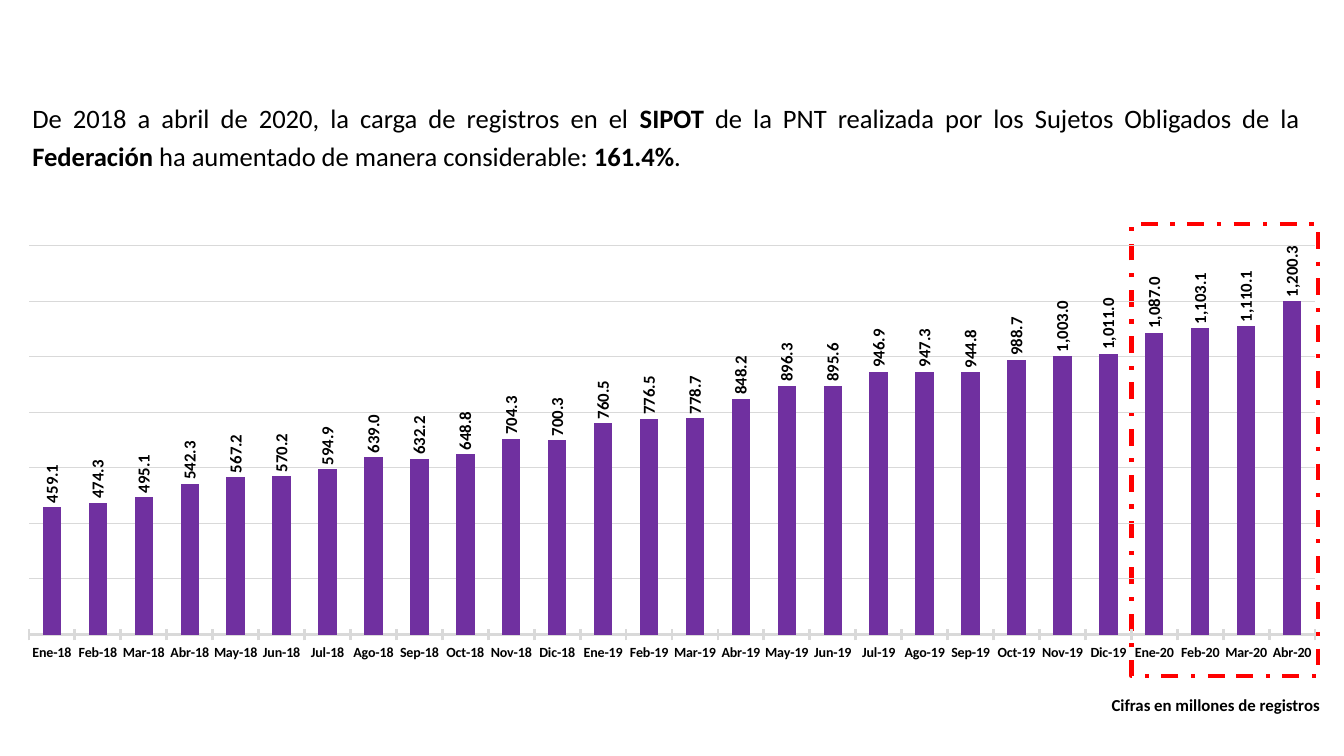
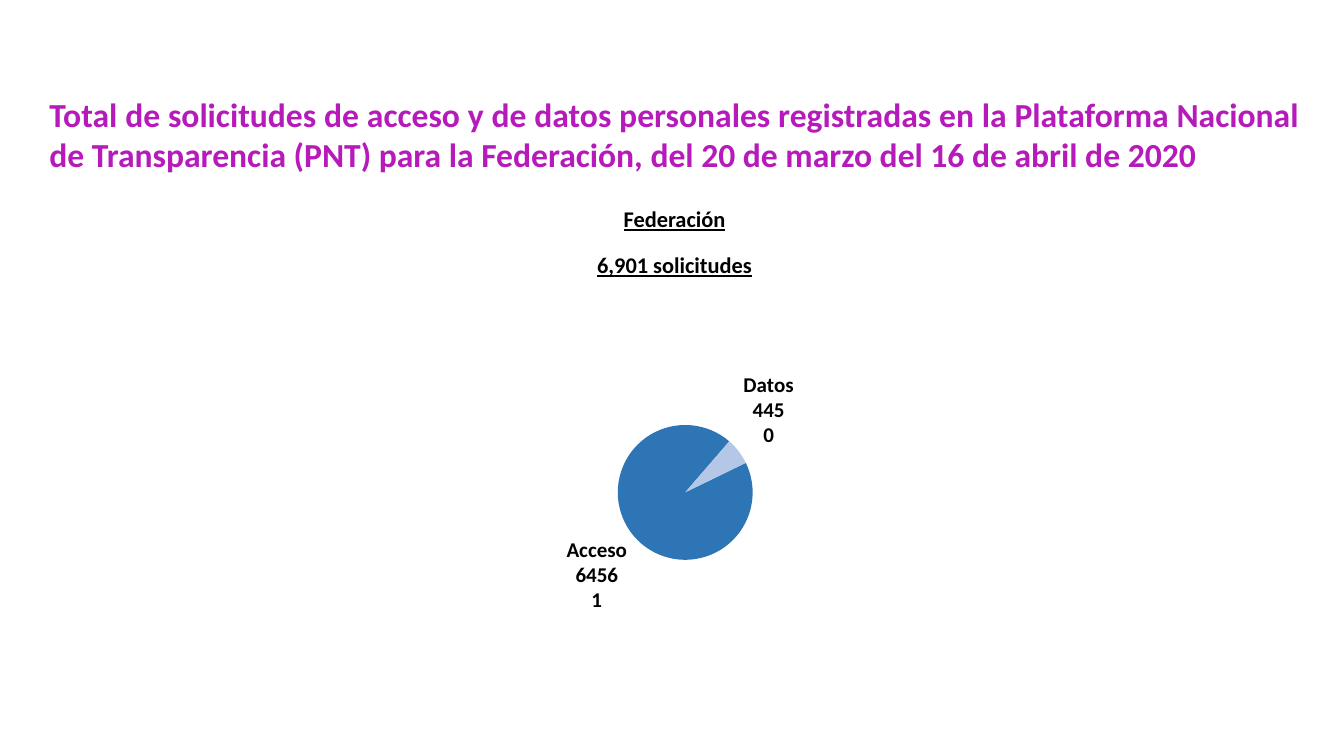
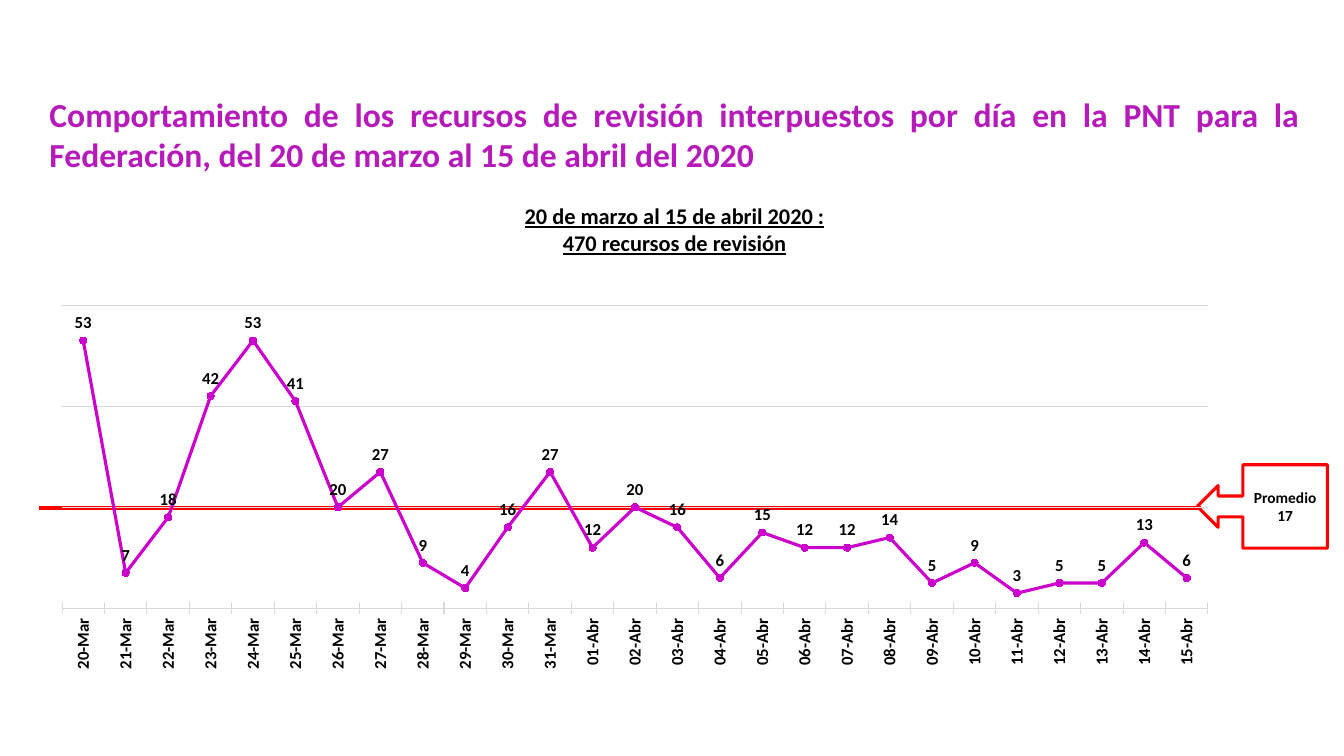
from dataclasses import dataclass

from lxml.etree import SubElement
from pptx import Presentation
from pptx.chart.data import CategoryChartData
from pptx.dml.color import RGBColor
from pptx.enum.chart import XL_CHART_TYPE, XL_LABEL_POSITION, XL_MARKER_STYLE, XL_TICK_MARK
from pptx.enum.dml import MSO_LINE
from pptx.enum.shapes import MSO_CONNECTOR, MSO_SHAPE
from pptx.enum.text import MSO_ANCHOR, PP_ALIGN
from pptx.oxml import parse_xml
from pptx.oxml.ns import nsdecls, qn
from pptx.util import Inches, Pt

FONT = "Calibri"
BLACK = RGBColor(0x00, 0x00, 0x00)
RED = RGBColor(0xFF, 0x00, 0x00)
MAGENTA = RGBColor(0xB6, 0x1A, 0xBA)
PINK = RGBColor(0xCC, 0x00, 0xCC)
PURPLE = RGBColor(0x70, 0x30, 0xA0)
BLUE = RGBColor(0x2E, 0x75, 0xB6)
PALE_BLUE = RGBColor(0xB4, 0xC7, 0xE7)
GRID_GRAY = RGBColor(0xD9, 0xD9, 0xD9)
TITLE_ONLY = 5

MONTHS = "Ene Feb Mar Abr May Jun Jul Ago Sep Oct Nov Dic".split()
LOAD_MONTHS = [f"{month}-{year}" for year in (18, 19, 20) for month in MONTHS][:28]
LOADS = [459.1, 474.3, 495.1, 542.3, 567.2, 570.2, 594.9, 639, 632.2, 648.8,
         704.3, 700.3, 760.5, 776.5, 778.7, 848.2, 896.3, 895.6, 946.9, 947.3,
         944.8, 988.7, 1003, 1011, 1087, 1103.1, 1110.1, 1200.3]
APPEAL_DAYS = ([f"{day}-Mar" for day in range(20, 32)]
               + [f"{day:02}-Abr" for day in range(1, 16)])
APPEALS = [53, 7, 18, 42, 53, 41, 20, 27, 9, 4, 16, 27, 12, 20, 16, 6, 15,
           12, 12, 14, 5, 9, 3, 5, 5, 13, 6]


@dataclass
class Box:
    left: int
    top: int
    width: int
    height: int

    def share(self, left, top, width, height):
        """Return an inner box given as percentages of this one."""
        return Box(int(self.left + self.width * left / 100),
                   int(self.top + self.height * top / 100),
                   int(self.width * width / 100), int(self.height * height / 100))

    def place(self):
        return self.left, self.top, self.width, self.height


PAGE = Box(0, 0, Inches(13.33), Inches(7.5))
TITLE_BOX = PAGE.share(2.93, 11.73, 94.52, 12.13)


# Text
def set_font(font, size, color=BLACK, bold=True, underline=None):
    font.name, font.size, font.bold, font.underline = FONT, Pt(size), bold, underline
    font.color.rgb = color


def write_text(frame, *lines, size, color=BLACK, bold=True, underline=None,
               align=PP_ALIGN.CENTER, anchor=MSO_ANCHOR.TOP, line_spacing=None, gap=0):
    """Write one paragraph a line; asterisks switch bold on and off."""
    frame.word_wrap = True
    frame.vertical_anchor = anchor
    for index, line in enumerate(lines):
        paragraph = frame.add_paragraph() if index else frame.paragraphs[0]
        paragraph.alignment = align
        paragraph.line_spacing = line_spacing
        paragraph.space_before = Pt(gap if index else 0)
        for number, piece in enumerate(line.split("*")):
            if piece:
                run = paragraph.add_run()
                run.text = piece
                set_font(run.font, size, color, bold != bool(number % 2), underline)


def add_label(slide, box, *lines, **text_format):
    write_text(slide.shapes.add_textbox(*box.place()).text_frame, *lines, **text_format)


def add_titled_slide(presentation, text, box=TITLE_BOX, size=24, color=MAGENTA, **text_format):
    slide = presentation.slides.add_slide(presentation.slide_layouts[TITLE_ONLY])
    title = slide.shapes.title
    title.left, title.top, title.width, title.height = box.place()
    write_text(title.text_frame, text, size=size, color=color,
               align=PP_ALIGN.JUSTIFY, **text_format)
    return slide


# Outlines
def style_outline(shape, width):
    shape.shadow.inherit = False
    shape.fill.background()
    shape.line.color.rgb = RED
    shape.line.width = Pt(width)


# Charts
def add_chart(slide, box, kind, categories, values, size, label_position, label_format):
    data = CategoryChartData()
    data.categories = categories
    data.add_series("Series 1", values)
    chart = slide.shapes.add_chart(kind, *box.place(), data).chart
    chart.has_legend = chart.has_title = False
    set_font(chart.font, size)
    labels = chart.plots[0].series[0].data_labels
    labels.show_value = True
    labels.position = label_position
    labels.number_format = label_format
    labels.number_format_is_linked = False
    set_font(labels.font, size)
    return chart


def style_axes(chart, maximum, step, size, axis_width):
    chart.plots[0].vary_by_categories = False
    values, categories = chart.value_axis, chart.category_axis
    values.visible = False
    values.minimum_scale, values.maximum_scale, values.major_unit = 0, maximum, step
    values.has_major_gridlines = True
    for line, width in ((values.major_gridlines.format.line, 0.75),
                        (categories.format.line, axis_width)):
        line.color.rgb = GRID_GRAY
        line.width = Pt(width)
    categories.major_tick_mark = XL_TICK_MARK.CROSS
    set_font(categories.tick_labels.font, size)


def rotate_text(chart, owner, degrees):
    for body in chart.element.xpath(f".//{owner}/c:txPr/a:bodyPr"):
        body.set("rot", str(degrees * 60000))
        body.set("vert", "horz")


def set_plot_box(chart, left, top, width, height):
    """Fix the inner plot area, in percentages of the chart."""
    area = chart.element.xpath("c:chart/c:plotArea")[0]
    for layout in area.findall(qn("c:layout")):
        area.remove(layout)
    layout = parse_xml(f"<c:layout {nsdecls('c')}><c:manualLayout/></c:layout>")
    settings = {"layoutTarget": "inner", "xMode": "edge", "yMode": "edge",
                "x": left / 100, "y": top / 100, "w": width / 100, "h": height / 100}
    for name, value in settings.items():
        SubElement(layout[0], qn(f"c:{name}")).set("val", str(value))
    area.insert(0, layout)


def add_load_chart(slide, box):
    plot_left, plot_width, marked_months = 0.9, 98.2, 4
    # Frame around the latest months
    marked_width = plot_width * marked_months / len(LOADS)
    frame_box = box.share(plot_left + plot_width - marked_width, 0, marked_width + 0.2, 98.25)
    frame = slide.shapes.add_shape(MSO_SHAPE.RECTANGLE, *frame_box.place())
    style_outline(frame, 3)
    frame.line.dash_style = MSO_LINE.DASH_DOT
    # Columns
    chart = add_chart(slide, box, XL_CHART_TYPE.COLUMN_CLUSTERED, LOAD_MONTHS, LOADS,
                      12, XL_LABEL_POSITION.OUTSIDE_END, "#,##0.0")
    style_axes(chart, 1400, 200, 10, 2)
    set_plot_box(chart, plot_left, 4.8, plot_width, 84.4)
    rotate_text(chart, "c:dLbls", -90)
    rotate_text(chart, "c:catAx", 0)
    plot = chart.plots[0]
    plot.gap_width, plot.overlap = 150, -7
    fill = plot.series[0].format.fill
    fill.solid()
    fill.fore_color.rgb = PURPLE


def add_request_chart(slide, box):
    chart = add_chart(slide, box, XL_CHART_TYPE.PIE, ["Acceso", "Datos"], [6456, 445],
                      15, XL_LABEL_POSITION.OUTSIDE_END, "#,##0")
    series = chart.plots[0].series[0]
    series.data_labels.show_category_name = True
    series.data_labels.show_percentage = True
    for index, color in enumerate((BLUE, PALE_BLUE)):
        fill = series.points[index].format.fill
        fill.solid()
        fill.fore_color.rgb = color
    # Each label item on its own line, first slice turned
    separator = parse_xml(f"<c:separator {nsdecls('c')}>\n</c:separator>")
    chart.element.xpath(".//c:ser/c:dLbls/c:showBubbleSize")[0].addnext(separator)
    pie = chart.element.xpath(".//c:pieChart")[0]
    SubElement(pie, qn("c:firstSliceAng")).set("val", "64")


def add_appeal_chart(slide, box):
    # Average line and callout
    line_box = box.share(0, 55.3, 97.3, 0)
    average = slide.shapes.add_connector(
        MSO_CONNECTOR.STRAIGHT, line_box.left, line_box.top,
        line_box.left + line_box.width, line_box.top)
    average.line.color.rgb = RED
    average.line.width = Pt(2.5)
    SubElement(average.element.spPr, qn("a:effectLst"))
    callout = slide.shapes.add_shape(MSO_SHAPE.LEFT_ARROW_CALLOUT,
                                     *box.share(97, 43.9, 10.9, 22).place())
    style_outline(callout, 2.25)
    callout.text_frame.margin_left = callout.text_frame.margin_right = Inches(0.05)
    write_text(callout.text_frame, "Promedio", "17", size=11, anchor=MSO_ANCHOR.MIDDLE)
    # Daily line
    chart = add_chart(slide, box, XL_CHART_TYPE.LINE_MARKERS, APPEAL_DAYS, APPEALS,
                      12, XL_LABEL_POSITION.ABOVE, "General")
    style_axes(chart, 60, 20, 12, 0.75)
    set_plot_box(chart, 1.9, 1.8, 96, 80)
    rotate_text(chart, "c:catAx", -90)
    series = chart.plots[0].series[0]
    series.smooth = False
    series.format.line.color.rgb = PINK
    series.format.line.width = Pt(2.25)
    marker = series.marker
    marker.style, marker.size = XL_MARKER_STYLE.CIRCLE, 5
    marker.format.fill.solid()
    marker.format.fill.fore_color.rgb = PINK
    marker.format.line.color.rgb = PINK


# Slides
def build_load_slide(presentation):
    slide = add_titled_slide(
        presentation,
        "De 2018 a abril de 2020, la carga de registros en el *SIPOT* de la PNT realizada "
        "por los Sujetos Obligados de la *Federación* ha aumentado de manera considerable: "
        "*161.4%*.",
        box=PAGE.share(1.65, 12, 95.8, 13.47), size=19, color=BLACK, bold=False,
        line_spacing=1.2)
    add_label(slide, PAGE.share(81.47, 91.2, 18, 4), "Cifras en millones de registros",
              size=12, anchor=MSO_ANCHOR.MIDDLE)
    add_load_chart(slide, PAGE.share(1.28, 29.6, 97.45, 60.93))


def build_request_slide(presentation):
    slide = add_titled_slide(
        presentation,
        "Total de solicitudes de acceso y de datos personales registradas en la Plataforma "
        "Nacional de Transparencia (PNT) para la Federación, del 20 de marzo del 16 de abril "
        "de 2020")
    add_label(slide, PAGE.share(36.65, 26.53, 27.08, 10.93), "Federación",
              "6,901 solicitudes", size=16, underline=True, gap=13.4)
    add_request_chart(slide, PAGE.share(34.96, 43.73, 30.68, 39.47))


def build_appeal_slide(presentation):
    slide = add_titled_slide(
        presentation,
        "Comportamiento de los recursos de revisión interpuestos por día en la PNT para la "
        "Federación, del 20 de marzo al 15 de abril del 2020")
    add_label(slide, PAGE.share(36.65, 26.13, 27.08, 8.53),
              "20 de marzo al 15 de abril 2020 :", "470 recursos de revisión",
              size=16, underline=True)
    add_appeal_chart(slide, PAGE.share(2.93, 39.47, 88.82, 50.13))


def main():
    presentation = Presentation()
    presentation.slide_width, presentation.slide_height = PAGE.width, PAGE.height
    build_load_slide(presentation)
    build_request_slide(presentation)
    build_appeal_slide(presentation)
    presentation.save("out.pptx")


if __name__ == "__main__":
    main()
